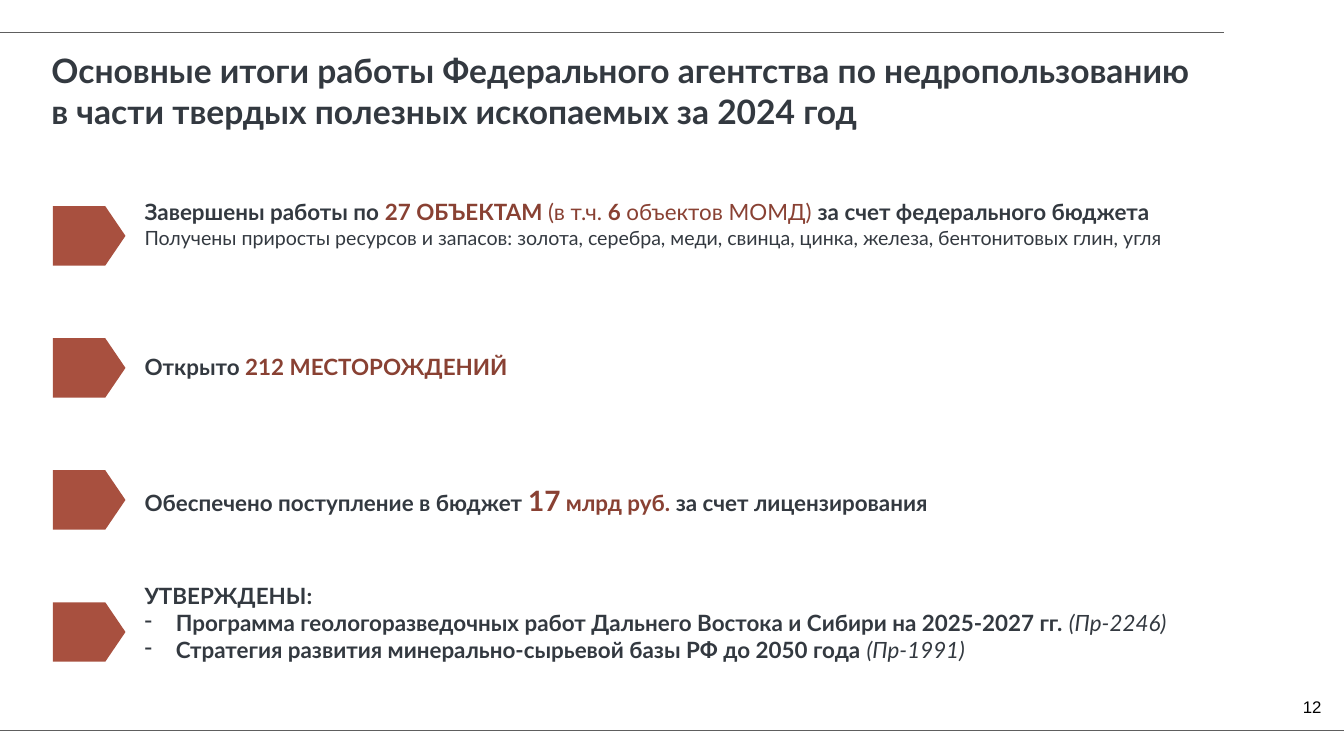
"""Build the slide on the 2024 results for solid minerals."""
import pptx
import pptx.util
import pptx.dml.color
import pptx.enum.shapes
import pptx.enum.text
import lxml.etree
import pptx.oxml.ns

THEME = {
    "font": "Lato", "number_font": "Arial",
    "ink": "333940", "accent": "894133", "arrow": "A8503F", "rule": "5E5E5E", "black": "000000",
    "title": 48, "large": 40, "body": 32, "small": 28, "number": 24,
}
STYLES = {
    "strong": ("body", "ink", True, False),
    "accent": ("body", "accent", True, False),
    "accent light": ("body", "accent", False, False),
    "figure": ("large", "accent", True, False),
    "detail": ("small", "ink", False, False),
    "decree": ("body", "ink", False, True),
}
TITLE = [
    "Основные итоги работы Федерального агентства по недропользованию",
    "в части твердых полезных ископаемых за 2024 год",
]
BREAK = ("\n", "strong")
RESULTS = [
    {"top": 389, "width": 2285, "height": 111, "paragraphs": [[
        ("Завершены работы по ", "strong"), ("27 ОБЪЕКТАМ ", "accent"),
        ("(в т.ч. ", "accent light"), ("6 ", "accent"), ("объектов МОМД) ", "accent light"),
        ("за счет федерального бюджета", "strong"), BREAK,
        ("Получены приросты ресурсов и запасов: золота, серебра, меди, свинца, цинка, "
         "железа, бентонитовых глин, угля", "detail")]]},
    {"top": 696, "width": 2285, "height": 64, "paragraphs": [[
        ("Открыто ", "strong"), ("212 МЕСТОРОЖДЕНИЙ", "accent")]]},
    {"top": 954, "width": 2285, "height": 77, "paragraphs": [[
        ("Обеспечено поступление в бюджет ", "strong"), ("17", "figure"),
        (" млрд руб. ", "accent"), ("за счет лицензирования", "strong")]]},
    {"top": 1151, "width": 2213, "height": 172, "wrap": False, "paragraphs": [
        [("УТВЕРЖДЕНЫ:", "strong")],
        [("Программа геологоразведочных работ Дальнего Востока и Сибири на 2025-2027 гг. ", "strong"),
         ("(Пр-2246)", "decree")],
        [("Стратегия развития минерально-сырьевой базы РФ до 2050 года ", "strong"),
         ("(Пр-1991)", "decree")]]},
]
PAGE_NUMBER = "12"
SLIDE_SIZE = (2667, 1500)
RULES = [(1, 65, 2429), (-1, 1450, 2668)]
ARROW_LEFT, ARROW_TOP, ARROW_STEP = 105, 409, 262
ARROW_SIZE = (144, 118)
TEXT_LEFT, HANGING = 277, 62
EMU_PER_PX = 9144


def px(*lengths):
    return [pptx.util.Emu(length * EMU_PER_PX) for length in lengths]


def color(name):
    return pptx.dml.color.RGBColor.from_string(THEME[name])


def format_font(font, size, ink, bold=False, italic=False, face="font"):
    font.name, font.size = THEME[face], pptx.util.Pt(THEME[size])
    font.bold, font.italic = bold, italic
    font.color.rgb = color(ink)


def set_frame(frame, wrap=True, inset=None):
    frame.word_wrap = wrap
    frame.auto_size = pptx.enum.text.MSO_AUTO_SIZE.SHAPE_TO_FIT_TEXT
    frame.vertical_anchor = pptx.enum.text.MSO_ANCHOR.TOP
    if inset:
        frame.margin_left, frame.margin_top, frame.margin_right, frame.margin_bottom = px(*[inset] * 4)


def add_dash(para):
    properties = para._p.get_or_add_pPr()
    indent, = px(HANGING)
    properties.set("marL", str(indent))
    properties.set("indent", str(-indent))
    bullet = lxml.etree.SubElement(properties, pptx.oxml.ns.qn("a:buChar"))
    bullet.set("char", "-")


def add_rule(page, left, top, right):
    rule = page.shapes.add_connector(
        pptx.enum.shapes.MSO_CONNECTOR.STRAIGHT, *px(left, top, right, top))
    rule.line.color.rgb, rule.line.width = color("rule"), pptx.util.Pt(1)
    lxml.etree.SubElement(rule._element.spPr, pptx.oxml.ns.qn("a:effectLst"))


def add_title(page):
    title = page.shapes.title
    title.left, title.top, title.width, title.height = px(96, 94, 2544, 173)
    set_frame(title.text_frame, inset=6)
    para = title.text_frame.paragraphs[0]
    para.text = "\v".join(TITLE)
    para.alignment = pptx.enum.text.PP_ALIGN.LEFT
    for span in para.runs:
        format_font(span.font, "title", "ink", bold=True)


def add_arrow(page, index):
    arrow = page.shapes.add_shape(
        pptx.enum.shapes.MSO_SHAPE.PENTAGON,
        *px(ARROW_LEFT, ARROW_TOP + index * ARROW_STEP, *ARROW_SIZE))
    arrow.adjustments[0] = 0.34
    arrow.shadow.inherit = False
    arrow.fill.solid()
    arrow.fill.fore_color.rgb = color("arrow")
    arrow.line.fill.background()


def add_result(page, result):
    box = page.shapes.add_textbox(*px(TEXT_LEFT, result["top"], result["width"], result["height"]))
    frame = box.text_frame
    set_frame(frame, result.get("wrap", True))
    for index, pieces in enumerate(result["paragraphs"]):
        para = frame.add_paragraph() if index else frame.paragraphs[0]
        if index:
            add_dash(para)
        for text, style in pieces:
            if text == "\n":
                para.add_line_break()
                continue
            span = para.add_run()
            span.text = text
            format_font(span.font, *STYLES[style])


def add_page_number(page):
    box = page.shapes.add_textbox(*px(2579, 1376, 50, 50))
    set_frame(box.text_frame, wrap=False, inset=6)
    para = box.text_frame.paragraphs[0]
    para.text = PAGE_NUMBER
    para.alignment = pptx.enum.text.PP_ALIGN.CENTER
    format_font(para.runs[0].font, "number", "black", face="number_font")


def main():
    deck = pptx.Presentation()
    deck.slide_width, deck.slide_height = px(*SLIDE_SIZE)
    page = deck.slides.add_slide(deck.slide_layouts[5])
    for rule in RULES:
        add_rule(page, *rule)
    add_title(page)
    for index, result in enumerate(RESULTS):
        add_arrow(page, index)
        add_result(page, result)
    add_page_number(page)
    deck.save("out.pptx")


if __name__ == "__main__":
    main()
